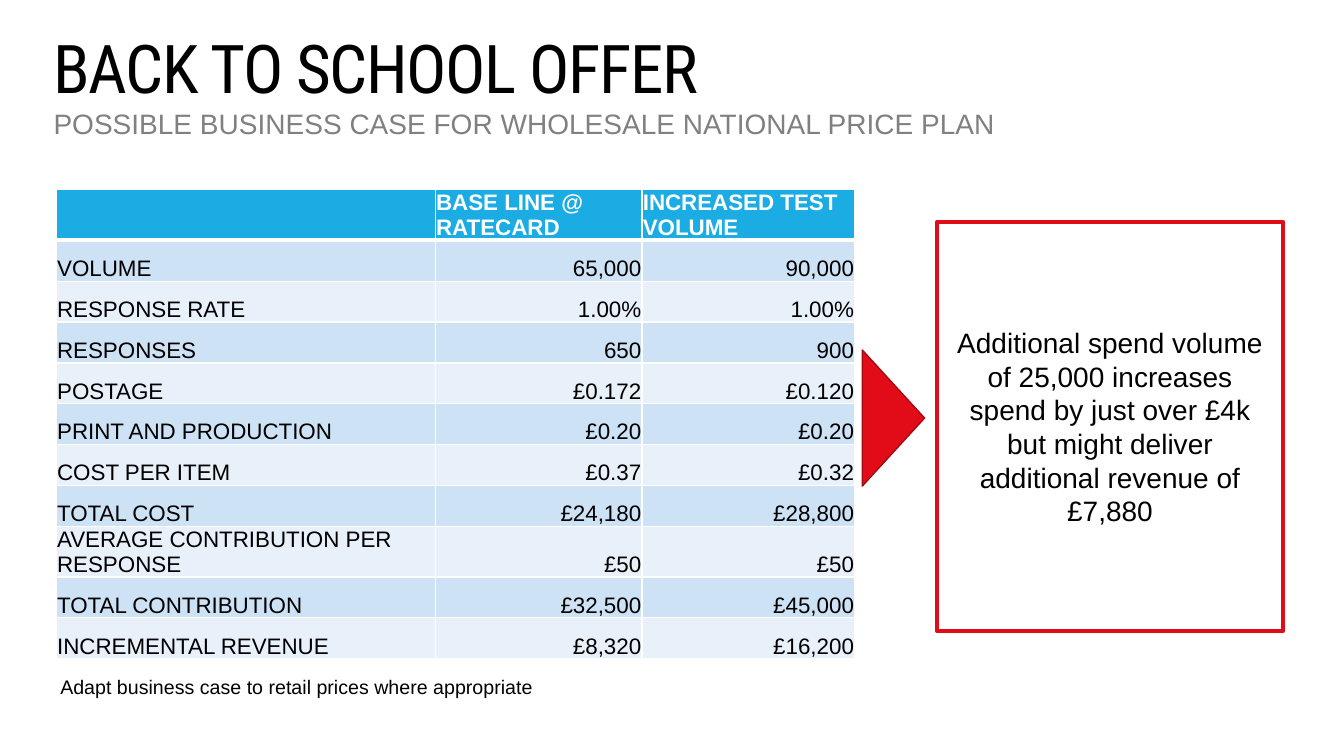
"""Build the back to school offer slide."""
from dataclasses import dataclass

from lxml import etree
from pptx import Presentation
from pptx import util as u
from pptx.dml.color import RGBColor
from pptx.enum import shapes, text
from pptx.oxml.ns import qn


@dataclass(frozen=True)
class Theme:
    """Colours, fonts and type sizes of the slide."""
    black: str = "000000"
    white: str = "FFFFFF"
    grey: str = "808080"
    blue: str = "1BACE4"
    bands: tuple = ("CDE3F5", "E8F1FA")
    red: str = "E20C18"
    dark_red: str = "A70912"
    title_font: str = "Roboto Condensed"
    body_font: str = "Arial"
    title_size: int = 48
    body_size: int = 20
    table_size: int = 16
    note_size: int = 14


THEME = Theme()
COLUMN_WIDTHS = (9.55, 5.21, 5.36)
ROW_HEIGHT = 1.03
BUSINESS_CASE = (
    ("", "BASE LINE @ RATECARD", "INCREASED TEST VOLUME"),
    ("VOLUME", "65,000", "90,000"),
    ("RESPONSE RATE", "1.00%", "1.00%"),
    ("RESPONSES", "650", "900"),
    ("POSTAGE", "£0.172", "£0.120"),
    ("PRINT AND PRODUCTION", "£0.20", "£0.20"),
    ("COST PER ITEM", "£0.37", "£0.32"),
    ("TOTAL COST", "£24,180", "£28,800"),
    ("AVERAGE CONTRIBUTION PER RESPONSE", "£50", "£50"),
    ("TOTAL CONTRIBUTION", "£32,500", "£45,000"),
    ("INCREMENTAL REVENUE", "£8,320", "£16,200"),
)


def place(left, top, width, height):
    """Turn a frame in centimetres into lengths."""
    return [u.Cm(value) for value in (left, top, width, height)]


def apply(target, values):
    """Set each attribute named in a dict of format values."""
    for name, value in values.items():
        setattr(target, name, value)


def write(frame, words, size, color, font=THEME.body_font, bold=False, **layout):
    """Write one formatted paragraph and return its run."""
    para = frame.paragraphs[0]
    apply(para, layout)
    span = para.add_run()
    span.text = words
    apply(span.font, {"name": font, "size": u.Pt(size), "bold": bold})
    span.font.color.rgb = RGBColor.from_string(color)
    return span


def add_text(page, frame, words, size, color, inset=True, wrap=True, **style):
    """Add a text box and return its run."""
    box = page.shapes.add_textbox(*place(*frame)).text_frame
    box.word_wrap = wrap
    if not inset:
        apply(box, dict.fromkeys(
            ("margin_left", "margin_top", "margin_right", "margin_bottom"), 0))
    return write(box, words, size, color, **style)


def add_outlined(page, kind, frame, line, width, fill=None):
    """Add a preset shape with an outline and an optional fill."""
    shape = page.shapes.add_shape(kind, *place(*frame))
    shape.shadow.inherit = False
    if fill:
        shape.fill.solid()
        shape.fill.fore_color.rgb = RGBColor.from_string(fill)
    else:
        shape.fill.background()
    shape.line.color.rgb = RGBColor.from_string(line)
    shape.line.width = u.Pt(width)
    return shape


def style_cell(cell, fill, bottom_width):
    """Give a cell white borders, a fill, thin margins and a bottom anchor."""
    properties = cell._tc.get_or_add_tcPr()
    for side, width in (("L", 1), ("R", 1), ("T", 1), ("B", bottom_width)):
        line = etree.SubElement(properties, qn(f"a:ln{side}"), w=str(u.Pt(width)))
        solid = etree.SubElement(line, qn("a:solidFill"))
        etree.SubElement(solid, qn("a:srgbClr"), val=THEME.white)
    cell.fill.solid()
    cell.fill.fore_color.rgb = RGBColor.from_string(fill)
    thin = u.Cm(0.02)
    apply(cell, {
        "margin_left": thin, "margin_right": thin, "margin_top": thin,
        "margin_bottom": 0, "vertical_anchor": text.MSO_ANCHOR.BOTTOM,
    })


def add_case_table(page, left, top, rows):
    """Add the banded business case table."""
    frame = place(left, top, sum(COLUMN_WIDTHS), ROW_HEIGHT * len(rows))
    table = page.shapes.add_table(len(rows), len(COLUMN_WIDTHS), *frame).table
    for column, width in zip(table.columns, COLUMN_WIDTHS):
        column.width = u.Cm(width)
    for r, values in enumerate(rows):
        table.rows[r].height = u.Cm(ROW_HEIGHT)
        header = r == 0
        fill = THEME.blue if header else THEME.bands[(r - 1) % 2]
        for c, value in enumerate(values):
            cell = table.cell(r, c)
            style_cell(cell, fill, 3 if header else 1)
            number = c > 0 and not header
            write(cell.text_frame, value, THEME.table_size,
                  THEME.white if header else THEME.black, bold=header,
                  alignment=text.PP_ALIGN.RIGHT if number else text.PP_ALIGN.LEFT)


def add_callout(page, frame, words):
    """Add the red framed conclusion."""
    shape = add_outlined(page, shapes.MSO_SHAPE.RECTANGLE, frame, THEME.red, 3)
    apply(shape.text_frame, {
        "word_wrap": True, "vertical_anchor": text.MSO_ANCHOR.MIDDLE})
    write(shape.text_frame, words, THEME.body_size, THEME.black,
          alignment=text.PP_ALIGN.CENTER)


def main():
    """Build and save the deck."""
    deck = Presentation()
    apply(deck, {"slide_width": u.Cm(33.87), "slide_height": u.Cm(19.05)})
    page = deck.slides.add_slide(deck.slide_layouts[6])
    add_case_table(page, 1.42, 4.78, BUSINESS_CASE)
    title = add_text(page, (1.35, 1.14, 30.99, 1.32), "BACK TO SCHOOL OFFER",
                     THEME.title_size, THEME.black, inset=False,
                     font=THEME.title_font, line_spacing=u.Pt(44))
    title._r.get_or_add_rPr().set("spc", "-100")
    add_text(page, (1.35, 2.77, 31.06, 0.74),
             "POSSIBLE BUSINESS CASE FOR WHOLESALE NATIONAL PRICE PLAN",
             THEME.body_size, THEME.grey, inset=False, line_spacing=0.9)
    arrow = add_outlined(page, shapes.MSO_SHAPE.ISOSCELES_TRIANGLE,
                         (20.8, 9.75, 3.43, 1.57), THEME.dark_red, 1, THEME.red)
    arrow.rotation = 90
    add_callout(page, (23.62, 5.59, 8.71, 10.31),
                "Additional spend volume of 25,000 increases spend by just over £4k "
                "but might deliver additional revenue of £7,880")
    add_text(page, (1.27, 16.87, 12.47, 0.86),
             "Adapt business case to retail prices where appropriate",
             THEME.note_size, THEME.black, wrap=False)
    deck.save("out.pptx")


if __name__ == "__main__":
    main()
